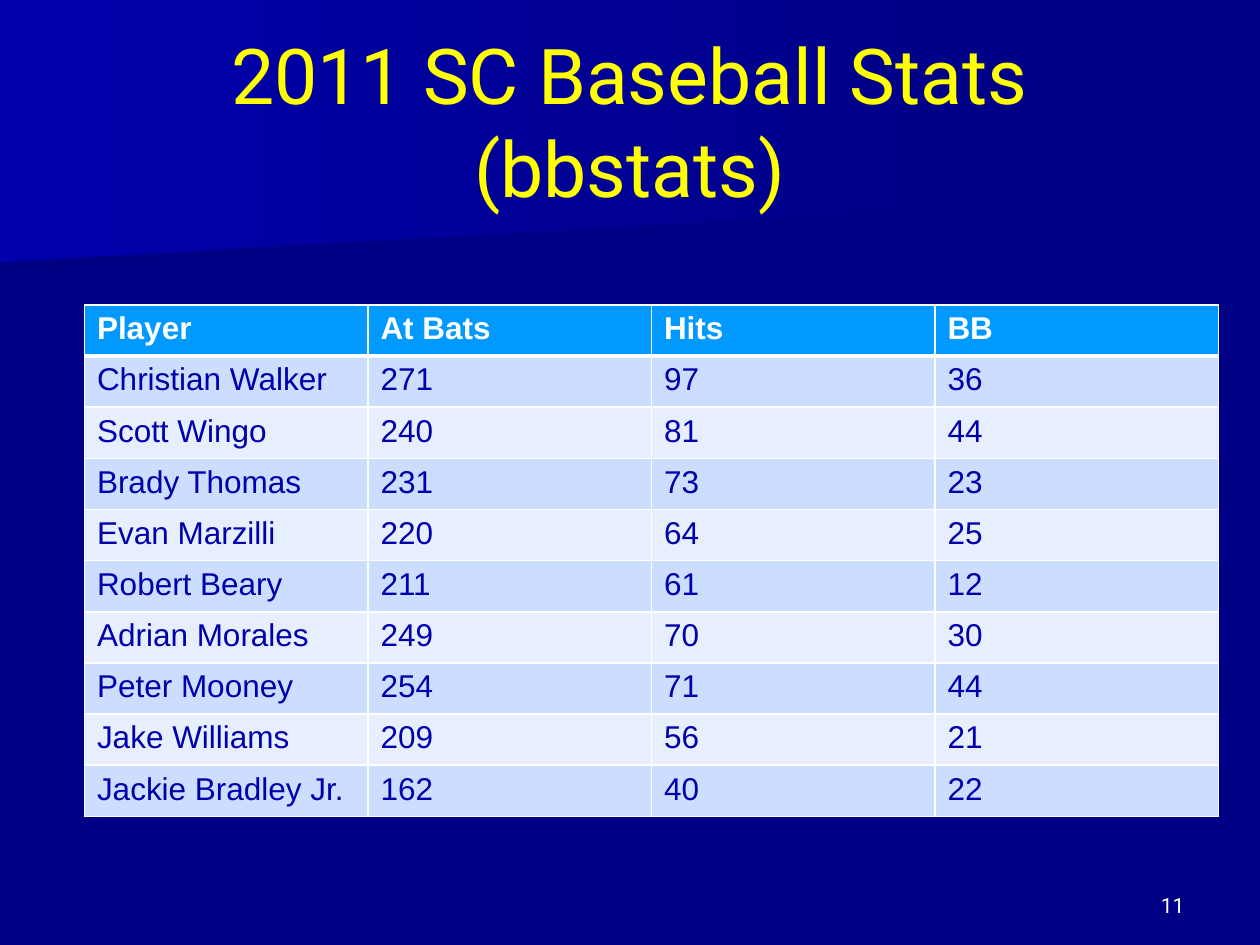
from lxml import etree
from pptx import Presentation
from pptx.dml.color import RGBColor
from pptx.enum.text import MSO_ANCHOR, PP_ALIGN
from pptx.oxml.ns import qn
from pptx.util import Inches, Pt

CENTER, RIGHT = PP_ALIGN.CENTER, PP_ALIGN.RIGHT
MIDDLE, BOTTOM = MSO_ANCHOR.MIDDLE, MSO_ANCHOR.BOTTOM
TITLE_ONLY = 5
NAVY, BLUE, WHITE = "000086", "0000AC", "FFFFFF"
HEADER_FILL, ROW_FILLS = "0099FF", ("CCDEFF", "E7EFFF")

STATS = [
    ("Player", "At Bats", "Hits", "BB"),
    ("Christian Walker", 271, 97, 36),
    ("Scott Wingo", 240, 81, 44),
    ("Brady Thomas", 231, 73, 23),
    ("Evan Marzilli", 220, 64, 25),
    ("Robert Beary", 211, 61, 12),
    ("Adrian Morales", 249, 70, 30),
    ("Peter Mooney", 254, 71, 44),
    ("Jake Williams", 209, 56, 21),
    ("Jackie Bradley Jr.", 162, 40, 22),
]


def rgb(color):
    return RGBColor.from_string(color)


def set_font(p, name, size, color, bold=False):
    p.font.name, p.font.size, p.font.bold = name, Pt(size), bold
    p.font.color.rgb = rgb(color)


def add_band(slide, box, right_share, start, end):
    """Draw a gradient band whose right side is right_share of the box's height."""
    left, top, width, height = map(Inches, box)
    builder = slide.shapes.build_freeform(left, top)
    builder.add_line_segments([
        (left + width, top),
        (left + width, top + int(height * right_share)),
        (left, top + height),
    ])
    sp = builder.convert_to_shape()
    sp.shadow.inherit = False
    sp.line.fill.background()
    sp.fill.gradient()
    sp.fill.gradient_angle = 0
    for stop, color in zip(sp.fill.gradient_stops, (start, end)):
        stop.color.rgb = rgb(color)


def place_title(slide, box, lines):
    title = slide.shapes.title
    title.left, title.top, title.width, title.height = map(Inches, box)
    slide.shapes._spTree.append(title._element)  # in front of the bands
    tf = title.text_frame
    tf.word_wrap = True
    tf.vertical_anchor = MIDDLE
    p = tf.paragraphs[0]
    p.alignment = CENTER
    for i, line in enumerate(lines):
        if i:
            p.add_line_break()
        p.add_run().text = line
    set_font(p, "Roboto", 44, "FFFF00")


def set_borders(cell, top, bottom):
    """Give a cell white borders, 1 pt at the sides."""
    tcPr = cell._tc.get_or_add_tcPr()
    for side, width in (("L", 1), ("R", 1), ("T", top), ("B", bottom)):
        ln = etree.SubElement(tcPr, qn(f"a:ln{side}"), w=str(Pt(width)))
        fill = etree.SubElement(ln, qn("a:solidFill"))
        etree.SubElement(fill, qn("a:srgbClr"), val=WHITE)


def add_stats_table(slide, box, rows):
    left, top, width, height = map(Inches, box)
    table = slide.shapes.add_table(len(rows), len(rows[0]), left, top, width, height).table
    for i, row in enumerate(rows):
        header = i == 0
        for j, value in enumerate(row):
            cell = table.cell(i, j)
            set_borders(cell, top=3 if i == 1 else 1, bottom=3 if header else 1)
            cell.fill.solid()
            cell.fill.fore_color.rgb = rgb(HEADER_FILL if header else ROW_FILLS[(i - 1) % 2])
            cell.text = str(value)
            set_font(cell.text_frame.paragraphs[0], "Arial", 18,
                     WHITE if header else BLUE, header)


def add_slide_number(slide, box, number):
    tf = slide.shapes.add_textbox(*map(Inches, box)).text_frame
    tf.word_wrap = True
    tf.vertical_anchor = BOTTOM
    p = tf.paragraphs[0]
    p.text = str(number)
    p.alignment = RIGHT
    set_font(p, "Roboto", 12, WHITE)


def main():
    prs = Presentation()
    prs.slide_width, prs.slide_height = Inches(10), Inches(7.5)
    slide = prs.slides.add_slide(prs.slide_layouts[TITLE_ONLY])
    slide.background.fill.solid()
    slide.background.fill.fore_color.rgb = rgb(NAVY)

    add_band(slide, (0, 1.01, 7.79, 1.15), 0.45, "000083", NAVY)
    add_band(slide, (0, 0, 7.92, 2.08), 0.78, BLUE, NAVY)
    place_title(slide, (0.5, 0.33, 9, 1.25), ("2011 SC Baseball Stats", "(bbstats)"))
    add_stats_table(slide, (0.67, 2.42, 9, 4.06), STATS)
    add_slide_number(slide, (7.17, 6.83, 2.33, 0.5), 11)
    prs.save("out.pptx")


if __name__ == "__main__":
    main()
